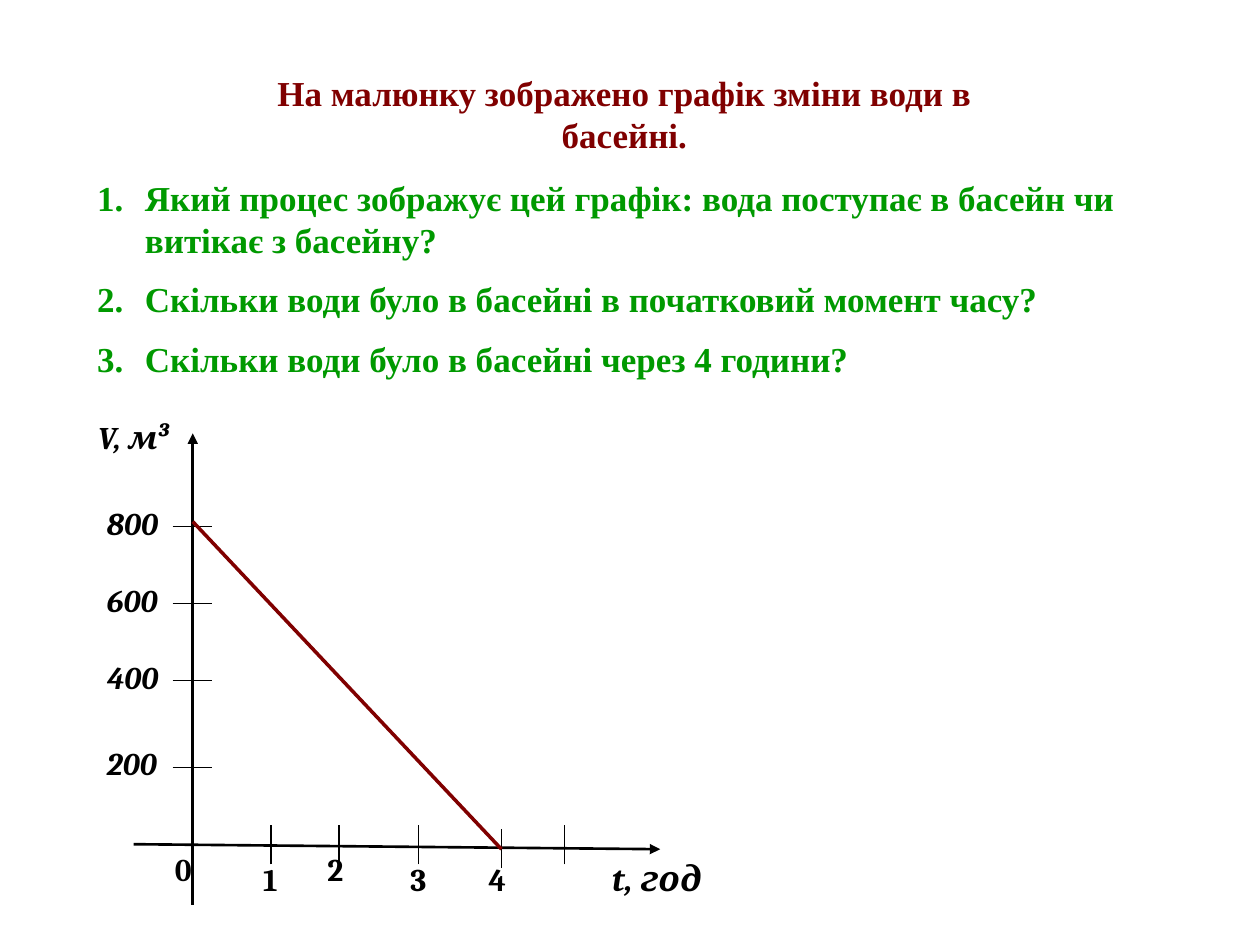
from dataclasses import dataclass

from lxml import etree
from pptx import Presentation
from pptx.dml.color import RGBColor
from pptx.enum.shapes import MSO_CONNECTOR
from pptx.enum.text import MSO_ANCHOR, MSO_AUTO_SIZE, PP_ALIGN
from pptx.oxml.ns import qn
from pptx.util import Inches, Pt

STRAIGHT = MSO_CONNECTOR.STRAIGHT
TOP = MSO_ANCHOR.TOP
NO_FIT = MSO_AUTO_SIZE.NONE
CENTER, LEFT = PP_ALIGN.CENTER, PP_ALIGN.LEFT


@dataclass(frozen=True)
class Theme:
    accent: RGBColor = RGBColor(0x80, 0x00, 0x00)
    question: RGBColor = RGBColor(0x00, 0x99, 0x00)
    ink: RGBColor = RGBColor(0x00, 0x00, 0x00)
    text_face: str = "Times New Roman"
    graph_face: str = "Cambria"
    text_size: int = 20
    label_size: int = 18
    tick_width: float = 0.75
    axis_width: float = 1.5
    graph_width: float = 2


class SlideBuilder:
    def __init__(self, slide, theme):
        self.slide = slide
        self.theme = theme

    def place(self, shape, left, top, width, height, wrap=True):
        shape.left, shape.top = Inches(left), Inches(top)
        shape.width, shape.height = Inches(width), Inches(height)
        frame = shape.text_frame
        frame.auto_size = NO_FIT
        frame.word_wrap = wrap
        frame.vertical_anchor = TOP
        return frame

    def style(self, paragraph, face, size, color, italic=False):
        font = paragraph.font
        font.name, font.size = face, Pt(size)
        font.bold, font.italic = True, italic
        font.color.rgb = color

    def title(self, text, *box):
        frame = self.place(self.slide.shapes.title, *box, wrap=False)
        frame.text = text
        heading = frame.paragraphs[0]
        heading.alignment = CENTER
        self.style(heading, self.theme.text_face, self.theme.text_size, self.theme.accent)

    def numbered_list(self, items, *box):
        frame = self.place(self.slide.placeholders[1], *box)
        frame.text = "\n".join(items)
        for index, item in enumerate(frame.paragraphs):
            props = item._p.get_or_add_pPr()
            props.set("marL", str(Inches(0.38)))
            props.set("indent", str(-Inches(0.38)))
            etree.SubElement(props, qn("a:buFont"), typeface="+mj-lt")
            etree.SubElement(props, qn("a:buAutoNum"), type="arabicPeriod")
            item.alignment = LEFT
            item.space_before = Pt(10 if index else 0)
            self.style(item, self.theme.text_face, self.theme.text_size, self.theme.question)

    def label(self, text, left, top, width=0.78, size=None, italic=False):
        box = self.slide.shapes.add_textbox(0, 0, 0, 0)
        frame = self.place(box, left, top, width, 0.4)
        frame.text = text
        self.style(frame.paragraphs[0], self.theme.graph_face,
                   size or self.theme.label_size, self.theme.ink, italic)

    def line(self, start, end, width, color=None, arrow=False):
        ends = [Inches(value) for value in (*start, *end)]
        connector = self.slide.shapes.add_connector(STRAIGHT, *ends)
        connector.line.width = Pt(width)
        connector.line.color.rgb = color or self.theme.ink
        props = connector._element.spPr
        if arrow:
            etree.SubElement(props.find(qn("a:ln")), qn("a:tailEnd"), type="triangle")
        etree.SubElement(props, qn("a:effectLst"))


def main():
    deck = Presentation()
    deck.slide_width, deck.slide_height = Inches(10), Inches(7.5)
    theme = Theme()
    page = SlideBuilder(deck.slides.add_slide(deck.slide_layouts[1]), theme)

    # Heading and questions
    page.title("На малюнку зображено графік зміни води в басейні.", 1.61, 0.52, 6.69, 0.55)
    page.numbered_list([
        "Який процес зображує цей графік: вода поступає в басейн чи витікає з басейну?",
        "Скільки води було в басейні в початковий момент часу?",
        "Скільки води було в басейні через 4 години?",
    ], 0.67, 1.35, 8.53, 2.29)

    # Axes with their names
    axis_x = 1.53
    page.line((1.06, 6.7), (5.24, 6.74), theme.axis_width, arrow=True)
    page.line((axis_x, 7.18), (axis_x, 3.44), theme.axis_width, arrow=True)
    page.label("V, м³", 0.68, 3.27, 1, italic=True)
    page.label("t, год", 4.76, 6.75, 1.5, size=theme.text_size, italic=True)

    # Volume scale
    for volume, y in ((200, 6.09), (400, 5.4), (600, 4.79), (800, 4.18)):
        page.line((1.37, y), (1.68, y), theme.tick_width)
        page.label(str(volume), 0.75, y - 0.23, italic=True)

    # Time scale
    for x, bottom in ((2.15, 6.86), (2.69, 6.86), (3.32, 6.86), (3.98, 6.89), (4.48, 6.86)):
        page.line((x, bottom), (x, bottom - 0.31), theme.tick_width)
    hours = ((1.29, 6.7), (1.99, 6.78), (2.5, 6.7), (3.16, 6.78), (3.78, 6.78))
    for hour, (left, top) in enumerate(hours):
        page.label(str(hour), left, top, 0.36)

    # Graph of the water volume
    page.line((axis_x, 4.14), (3.98, 6.74), theme.graph_width, theme.accent)

    deck.save("out.pptx")


if __name__ == "__main__":
    main()
